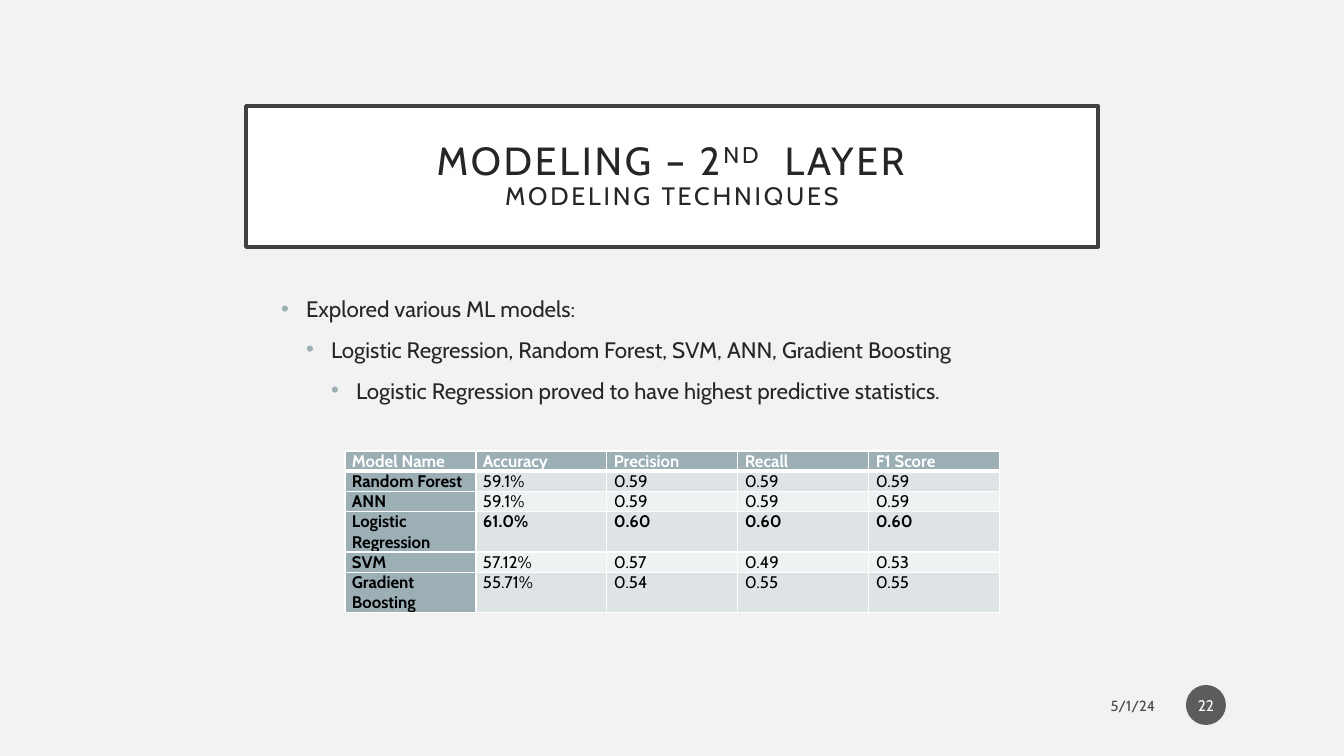
"""Build the slide on second-layer modeling techniques."""
from dataclasses import dataclass

from lxml import etree
from pptx import Presentation
from pptx.dml.color import RGBColor
from pptx.enum.shapes import MSO_SHAPE
from pptx.enum.text import MSO_ANCHOR, PP_ALIGN
from pptx.oxml.ns import qn
from pptx.util import Pt

TITLE_LINES = [
    [("MODELING – 2", "title", False), ("ND", "title", True), ("  LAYER", "title", False)],
    [("MODELING TECHNIQUES", "subtitle", False)],
]
POINTS = [
    "Explored various ML models:",
    "Logistic Regression, Random Forest, SVM, ANN, Gradient Boosting",
    "Logistic Regression proved to have highest predictive statistics.",
]
SCORES = [
    ("Model Name", "Accuracy", "Precision", "Recall", "F1 Score"),
    ("Random Forest", "59.1%", "0.59", "0.59", "0.59"),
    ("ANN", "59.1%", "0.59", "0.59", "0.59"),
    ("Logistic Regression", "61.0%", "0.60", "0.60", "0.60"),
    ("SVM", "57.12%", "0.57", "0.49", "0.53"),
    ("Gradient Boosting", "55.71%", "0.54", "0.55", "0.55"),
]
BEST_MODEL = "Logistic Regression"
WRAPPED_MODELS = {"Logistic Regression", "Gradient Boosting"}
DATE = "5/1/24"
PAGE_NUMBER = "22"

PAGE_SIZE = (1344, 756)
TITLE_AREA = (246, 106, 852, 141)
BODY_AREA = (246, 290, 852, 342)
DATE_AREA = (862, 688, 303, 35)
NUMBER_AREA = (1186, 685, 40, 40)
TABLE_LEFT, TABLE_TOP = 345, 451
COLUMN_WIDTH, LINE_HEIGHT = 131, 20
INDENT_STEP = 25
TEXT_INSETS = (10, 5, 10, 5)
CELL_INSETS = (7, 0, 7, 0)
EMU_PER_PX = 12192000 / 1344

LEFT, CENTER, RIGHT = PP_ALIGN.LEFT, PP_ALIGN.CENTER, PP_ALIGN.RIGHT
TOP, MIDDLE = MSO_ANCHOR.TOP, MSO_ANCHOR.MIDDLE
RECTANGLE, OVAL = MSO_SHAPE.RECTANGLE, MSO_SHAPE.OVAL


@dataclass(frozen=True)
class Theme:
    """Hold the colours and type sizes of the slide."""
    font: str = "Cabin"
    background: str = "F2F2F2"
    white: str = "FFFFFF"
    black: str = "000000"
    ink: str = "262626"
    frame: str = "404040"
    badge: str = "1D1D1D"
    accent: str = "9BAFB5"
    bands: tuple = ("DEE3E5", "EFF2F3")
    title: float = 28
    subtitle: float = 18
    body: float = 16
    table: float = 12
    date: float = 10.5
    number: float = 11
    opacity: int = 70


THEME = Theme()


def px(length):
    """Turn px into EMU."""
    return round(length * EMU_PER_PX)


def assign(target, values):
    """Set each attribute named in a dict."""
    for name, value in values.items():
        setattr(target, name, value)


def paint(fill, color, opacity=100):
    """Give a fill one colour and an opacity in percent."""
    fill.solid()
    fill.fore_color.rgb = RGBColor.from_string(color)
    if opacity < 100:
        for node in fill._xPr.iter(qn("a:srgbClr")):
            etree.SubElement(node, qn("a:alpha"), val=str(opacity * 1000))


def set_frame(frame, anchor, insets=TEXT_INSETS):
    """Set the wrapping, anchor and insets of a text frame."""
    sides = ("margin_left", "margin_top", "margin_right", "margin_bottom")
    assign(frame, {"word_wrap": True, "vertical_anchor": anchor})
    assign(frame, dict(zip(sides, map(px, insets))))


def add_span(para, text, size, color, bold=False, opacity=100):
    """Add a formatted run to a paragraph."""
    span = para.add_run()
    span.text = text
    assign(span.font, {"name": THEME.font, "size": Pt(size), "bold": bold})
    paint(span.font.fill, color, opacity)
    return span


def add_panel(page, kind, area, color, opacity=100):
    """Add a filled preset shape without outline or shadow."""
    panel = page.shapes.add_shape(kind, *map(px, area))
    panel.shadow.inherit = False
    paint(panel.fill, color, opacity)
    panel.line.fill.background()
    return panel


def add_title(page):
    """Add the framed two-line title."""
    box = add_panel(page, RECTANGLE, TITLE_AREA, THEME.white)
    paint(box.line.fill, THEME.frame)
    box.line.width = Pt(2.5)
    set_frame(box.text_frame, MIDDLE, (20, 20, 20, 20))
    para = box.text_frame.paragraphs[0]
    assign(para, {"alignment": CENTER, "line_spacing": 0.9})
    for index, line in enumerate(TITLE_LINES):
        if index:
            para.add_line_break()
        for text, role, raised in line:
            span = add_span(para, text, getattr(THEME, role), THEME.ink)
            properties = span.font._element
            properties.set("spc", "200")
            if raised:
                properties.set("baseline", "30000")


def add_points(page):
    """Add the bullets, each one step deeper than the last."""
    frame = page.shapes.add_textbox(*map(px, BODY_AREA)).text_frame
    set_frame(frame, TOP)
    for level, text in enumerate(POINTS):
        para = frame.add_paragraph() if level else frame.paragraphs[0]
        assign(para, {"alignment": LEFT, "level": level, "space_before": Pt(10)})
        add_span(para, text, THEME.body, THEME.ink)
        properties = para._p.get_or_add_pPr()
        properties.set("marL", str(px(INDENT_STEP * (level + 2))))
        properties.set("indent", str(-px(INDENT_STEP)))
        color = etree.SubElement(properties, qn("a:buClr"))
        etree.SubElement(color, qn("a:srgbClr"), val=THEME.accent)
        etree.SubElement(properties, qn("a:buFont"), typeface="Arial")
        etree.SubElement(properties, qn("a:buChar"), char="•")


def add_borders(cell, row):
    """Draw white cell borders, thicker below the header."""
    widths = {"L": 1, "R": 1, "T": 3 if row == 1 else 1, "B": 3 if row == 0 else 1}
    properties = cell._tc.get_or_add_tcPr()
    for index, (side, width) in enumerate(widths.items()):
        line = etree.Element(qn(f"a:ln{side}"), w=str(Pt(width)))
        fill = etree.SubElement(line, qn("a:solidFill"))
        etree.SubElement(fill, qn("a:srgbClr"), val=THEME.white)
        properties.insert(index, line)


def add_scores(page):
    """Add the table of model scores."""
    heights = [LINE_HEIGHT * (2 if row[0] in WRAPPED_MODELS else 1) for row in SCORES]
    columns = len(SCORES[0])
    area = (TABLE_LEFT, TABLE_TOP, COLUMN_WIDTH * columns, sum(heights))
    table = page.shapes.add_table(len(SCORES), columns, *map(px, area)).table
    assign(table, {"first_row": False, "horz_banding": False})
    for column in table.columns:
        column.width = px(COLUMN_WIDTH)
    for row, values in enumerate(SCORES):
        table.rows[row].height = px(heights[row])
        for column, text in enumerate(values):
            cell = table.cell(row, column)
            heading = row == 0 or column == 0
            set_frame(cell.text_frame, None)
            sides = ("margin_left", "margin_top", "margin_right", "margin_bottom")
            assign(cell, dict(zip(sides, map(px, CELL_INSETS))))
            paint(cell.fill, THEME.accent if heading else THEME.bands[(row - 1) % 2])
            add_borders(cell, row)
            color = THEME.black if row else THEME.white
            bold = heading or values[0] == BEST_MODEL
            add_span(cell.text_frame.paragraphs[0], text, THEME.table, color, bold)


def add_footer(page):
    """Add the date and the round page number."""
    date = page.shapes.add_textbox(*map(px, DATE_AREA))
    badge = add_panel(page, OVAL, NUMBER_AREA, THEME.badge, THEME.opacity)
    for box, text, size, color, opacity, alignment, insets in (
        (date, DATE, THEME.date, THEME.black, THEME.opacity, RIGHT, TEXT_INSETS),
        (badge, PAGE_NUMBER, THEME.number, THEME.white, 100, CENTER, (2, 5, 2, 5)),
    ):
        set_frame(box.text_frame, MIDDLE, insets)
        para = box.text_frame.paragraphs[0]
        para.alignment = alignment
        add_span(para, text, size, color, opacity=opacity)


def main():
    """Build and save the deck."""
    deck = Presentation()
    assign(deck, dict(zip(("slide_width", "slide_height"), map(px, PAGE_SIZE))))
    page = deck.slides.add_slide(deck.slide_layouts[6])
    paint(page.background.fill, THEME.background)
    for add_part in (add_title, add_points, add_footer, add_scores):
        add_part(page)
    deck.save("out.pptx")


if __name__ == "__main__":
    main()
